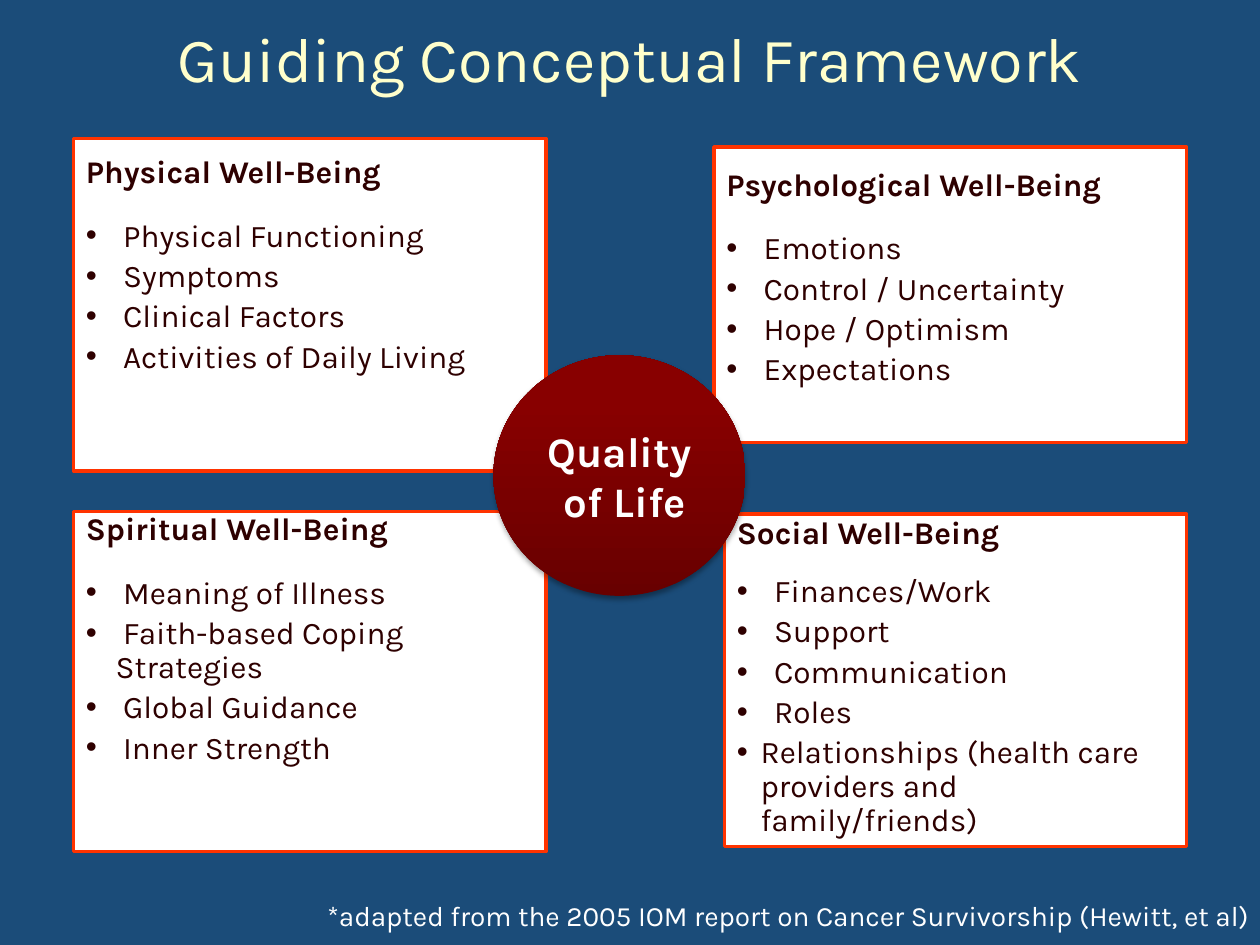
from dataclasses import dataclass

from lxml.etree import SubElement
from pptx import Presentation
from pptx.dml.color import RGBColor
from pptx.enum.shapes import MSO_SHAPE as Kind
from pptx.enum.text import MSO_ANCHOR as Anchor, PP_ALIGN as Align
from pptx.oxml import parse_xml
from pptx.oxml.ns import nsdecls, qn
from pptx.util import Pt

FONT = "Karla"
NAVY, CREAM, WHITE = "1B4C79", "FFFFCC", "FFFFFF"
INK, EDGE, DARK, RED = "2E0000", "FF3300", "680000", "880000"
HANG = 17


@dataclass
class Panel:
    """A white box with a heading and bullets."""
    head: str
    items: list[str]
    left: float
    top: float
    width: float
    height: float
    inset: float
    gap: float = 17
    tail: str = ""


PANELS = [
    Panel("Physical Well-Being",
          [" Physical Functioning", " Symptoms", " Clinical Factors",
           " Activities of Daily Living"],
          42, 79.2, 270, 190, 10),
    Panel("Social Well-Being",
          [" Finances/Work", " Support", " Communication", " Roles"],
          414, 293.8, 264, 190, 2, 13.5,
          "Relationships (health care providers and family/friends)"),
    Panel("Psychological Well-Being",
          [" Emotions", " Control / Uncertainty", " Hope / Optimism",
           " Expectations"],
          408, 84, 270, 169, 12.5),
    Panel("Spiritual Well-Being",
          [" Meaning of Illness", " Faith-based Coping Strategies",
           " Global Guidance", " Inner Strength"],
          42, 292.2, 270, 194.5, 1),
]


def tint(code: str) -> RGBColor:
    """Turn a hex string into a colour."""
    return RGBColor.from_string(code)


def write(frame, text: str, *, size: float = 18, color: str = INK,
          bold: bool = False, align=Align.LEFT, space: float = 0,
          lines: float = 1, hang: float = 0) -> None:
    """Add one formatted paragraph to a text frame."""
    para = frame.paragraphs[0]
    if para.runs:
        para = frame.add_paragraph()
    para.alignment = align
    para.space_before = Pt(space)
    para.line_spacing = lines
    if hang:
        props = para._p.get_or_add_pPr()
        props.set("marL", str(Pt(hang)))
        props.set("indent", str(-Pt(hang)))
        SubElement(props, qn("a:buFont")).set("typeface", "Arial")
        SubElement(props, qn("a:buChar")).set("char", "•")
    run = para.add_run()
    run.text = text
    font = run.font
    font.name, font.size, font.bold = FONT, Pt(size), bold
    font.color.rgb = tint(color)


def draw_panel(slide, panel: Panel) -> None:
    """Draw a box with its heading and bullet list."""
    box = slide.shapes.add_shape(
        Kind.RECTANGLE, Pt(panel.left), Pt(panel.top),
        Pt(panel.width), Pt(panel.height))
    box.shadow.inherit = False
    box.fill.solid()
    box.fill.fore_color.rgb = tint(WHITE)
    box.line.color.rgb = tint(EDGE)
    box.line.width = Pt(2)
    frame = box.text_frame
    frame.word_wrap = True
    frame.vertical_anchor = Anchor.TOP
    frame.margin_top = Pt(panel.inset)
    frame.margin_bottom = 0
    write(frame, panel.head, bold=True, lines=0.9)
    for i, item in enumerate(panel.items):
        write(frame, item, space=3.6 if i else panel.gap, lines=0.9, hang=HANG)
    if panel.tail:
        write(frame, panel.tail, space=3.6, lines=0.9, hang=13.5)


def draw_hub(slide) -> None:
    """Draw the shaded circle in the middle."""
    hub = slide.shapes.add_shape(
        Kind.OVAL, Pt(282), Pt(203), Pt(144), Pt(137.5))
    hub.line.fill.background()
    hub.fill.gradient()
    hub.fill.gradient_angle = 90
    for stop, code, spot in zip(hub.fill.gradient_stops, (DARK, RED), (0, 0.8)):
        stop.color.rgb = tint(code)
        stop.position = spot
    hub._element.spPr.append(parse_xml(
        f'<a:effectLst {nsdecls("a")}><a:outerShdw blurRad="{Pt(3.1)}" '
        f'dist="{Pt(1.8)}" dir="5400000" rotWithShape="0">'
        '<a:srgbClr val="000000"><a:alpha val="35000"/></a:srgbClr>'
        '</a:outerShdw></a:effectLst>'))
    frame = hub.text_frame
    frame.word_wrap = False
    frame.vertical_anchor = Anchor.MIDDLE
    for text in ("Quality", " of Life"):
        write(frame, text, size=24, color=WHITE, bold=True, align=Align.CENTER)


def main() -> None:
    """Build the slide and save it."""
    deck = Presentation()
    deck.slide_width, deck.slide_height = Pt(720), Pt(540)
    slide = deck.slides.add_slide(deck.slide_layouts[5])
    back = slide.background.fill
    back.solid()
    back.fore_color.rgb = tint(NAVY)

    title = slide.shapes.title
    title.left, title.top = Pt(36), Pt(-12)
    title.width, title.height = Pt(648), Pt(90)
    title.text_frame.vertical_anchor = Anchor.MIDDLE
    write(title.text_frame, "Guiding Conceptual Framework",
          size=36, color=CREAM, align=Align.CENTER)

    for panel in PANELS:
        draw_panel(slide, panel)
    draw_hub(slide)

    note = slide.shapes.add_textbox(Pt(180), Pt(510), Pt(543.5), Pt(26.5))
    note.text_frame.word_wrap = False
    write(note.text_frame, "*adapted from the 2005 IOM report on Cancer "
          "Survivorship (Hewitt, et al)", size=16, color=WHITE)
    deck.save("out.pptx")


if __name__ == "__main__":
    main()
